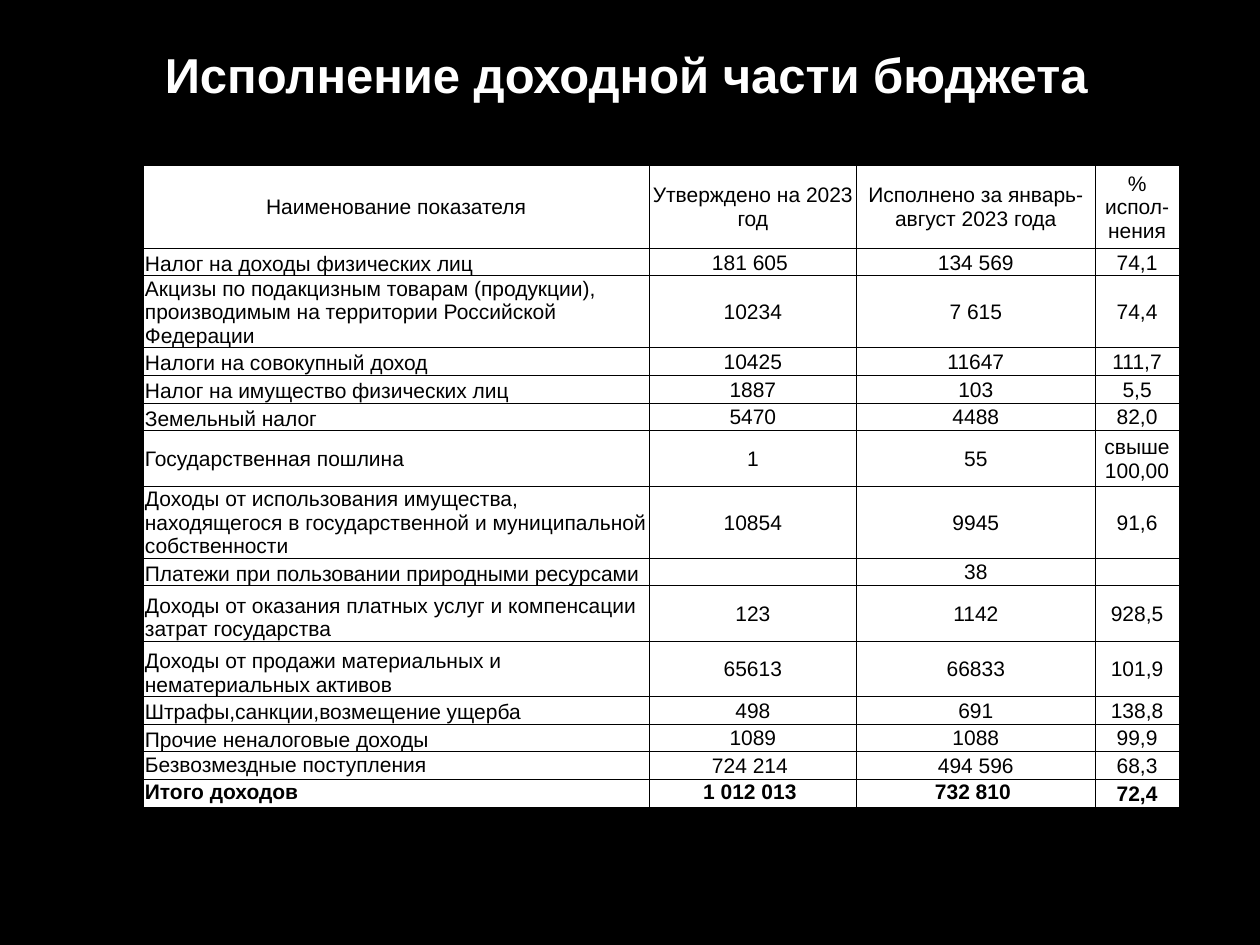
from lxml import etree
from pptx import Presentation
from pptx.dml.color import RGBColor
from pptx.enum.text import MSO_ANCHOR, PP_ALIGN
from pptx.oxml.ns import qn
from pptx.util import Inches, Pt

TOP, MIDDLE, BOTTOM = MSO_ANCHOR.TOP, MSO_ANCHOR.MIDDLE, MSO_ANCHOR.BOTTOM
LEFT, CENTER, JUSTIFY = PP_ALIGN.LEFT, PP_ALIGN.CENTER, PP_ALIGN.JUSTIFY

SLIDE_WIDTH, SLIDE_HEIGHT = 10, 7.5
TITLE_BOX = (0.47, 0.23, 9, 0.72)
TABLE_BOX = (1.14, 1.31, 8.22, 4.95)
COLUMN_WIDTHS = (4.01, 1.65, 1.89, 0.67)
LINE_HEIGHT = 0.22
BLACK, WHITE = "000000", "FFFFFF"
TITLE_FONT = {"name": "Arial", "size": Pt(28), "bold": True}
BODY_FONT = {"name": "Arial", "size": Pt(12), "bold": False}
TOTAL_FONT = {**BODY_FONT, "bold": True}
CELL_FORMAT = {
    "margin_left": Inches(0.01),
    "margin_right": Inches(0.01),
    "margin_top": Inches(0.01),
    "margin_bottom": 0,
}

HEADER = ("Наименование показателя", "Утверждено на 2023 год",
          "Исполнено за январь-август 2023 года", "% испол-нения")
INCOME = [
    (1, "Налог на доходы физических лиц", "181 605 ", "134 569", "74,1"),
    (2.25, "Акцизы по подакцизным товарам (продукции), производимым на территории "
     "Российской Федерации", "10234", "7 615", "74,4"),
    (1, "Налоги на совокупный доход", "10425", "11647", "111,7"),
    (1, "Налог на имущество физических лиц", "1887", "103", "5,5"),
    (1, "Земельный налог", "5470", "4488", "82,0"),
    (2, "Государственная пошлина", "1", "55", "свыше 100,00"),
    (2.25, "Доходы от использования имущества, находящегося в государственной "
     "и муниципальной собственности", "10854", "9945", "91,6"),
    (1, "Платежи при пользовании природными ресурсами", "", "38", ""),
    (2, "Доходы от оказания платных услуг и компенсации затрат государства",
     "123", "1142", "928,5"),
    (2, "Доходы от продажи материальных и нематериальных активов",
     "65613", "66833", "101,9"),
    (1, "Штрафы,санкции,возмещение ущерба", "498", "691", "138,8"),
    (1, "Прочие неналоговые доходы", "1089", "1088", "99,9"),
]
GRANTS = (1, "Безвозмездные поступления", "724 214 ", "494 596", "68,3")
TOTAL = (1, "Итого доходов", "1 012 013 ", "732 810 ", "72,4")
CENTERED_LABEL = "Государственная пошлина"


def color(value):
    return RGBColor.from_string(value)


def apply_format(target, values):
    for name, value in values.items():
        setattr(target, name, value)


def write_text(paragraph, text, font, font_color, alignment):
    paragraph.alignment = alignment
    if text:
        run = paragraph.add_run()
        run.text = text
        apply_format(run.font, font)
        run.font.color.rgb = color(font_color)
    else:
        end = etree.SubElement(paragraph._p, qn("a:endParaRPr"))
        end.set("sz", str(int(font["size"].pt * 100)))


def add_borders(cell):
    properties = cell._tc.get_or_add_tcPr()
    for side in ("L", "R", "T", "B"):
        line = etree.SubElement(properties, qn(f"a:ln{side}"), w=str(Pt(0.5)))
        fill = etree.SubElement(line, qn("a:solidFill"))
        etree.SubElement(fill, qn("a:srgbClr"), val=BLACK)


def fill_cell(cell, text, font, alignment, anchor):
    apply_format(cell, {**CELL_FORMAT, "vertical_anchor": anchor})
    add_borders(cell)
    cell.fill.solid()
    cell.fill.fore_color.rgb = color(WHITE)
    write_text(cell.text_frame.paragraphs[0], text, font, BLACK, alignment)


def fill_row(table, index, row, font, alignments, anchors):
    lines, *texts = row
    table.rows[index].height = Inches(lines * LINE_HEIGHT)
    for column, values in enumerate(zip(texts, alignments, anchors)):
        text, alignment, anchor = values
        fill_cell(table.cell(index, column), text, font, alignment, anchor)


def add_title(slide, box):
    title = slide.shapes.title
    title.left, title.top, title.width, title.height = map(Inches, box)
    frame = title.text_frame
    apply_format(frame, {"word_wrap": True, "vertical_anchor": MIDDLE})
    write_text(frame.paragraphs[0], "Исполнение доходной части бюджета",
               TITLE_FONT, WHITE, CENTER)


def add_budget_table(slide, box):
    row_count = len(INCOME) + 3
    table = slide.shapes.add_table(row_count, len(HEADER), *map(Inches, box)).table
    apply_format(table, {"first_row": False, "horz_banding": False})
    for column, width in zip(table.columns, COLUMN_WIDTHS):
        column.width = Inches(width)
    fill_row(table, 0, (3, *HEADER), BODY_FONT, [CENTER] * 4, [MIDDLE] * 4)
    for index, row in enumerate(INCOME, start=1):
        label_anchor = MIDDLE if row[1] == CENTERED_LABEL else BOTTOM
        fill_row(table, index, row, BODY_FONT, [LEFT] + [CENTER] * 3,
                 [label_anchor] + [MIDDLE] * 3)
    closing_alignments = [JUSTIFY] + [CENTER] * 3
    fill_row(table, row_count - 2, GRANTS, BODY_FONT, closing_alignments,
             [TOP] + [MIDDLE] * 3)
    fill_row(table, row_count - 1, TOTAL, TOTAL_FONT, closing_alignments,
             [TOP] * 3 + [MIDDLE])


def main():
    presentation = Presentation()
    presentation.slide_width = Inches(SLIDE_WIDTH)
    presentation.slide_height = Inches(SLIDE_HEIGHT)
    slide = presentation.slides.add_slide(presentation.slide_layouts[5])
    slide.background.fill.solid()
    slide.background.fill.fore_color.rgb = color(BLACK)
    add_title(slide, TITLE_BOX)
    add_budget_table(slide, TABLE_BOX)
    presentation.save("out.pptx")


if __name__ == "__main__":
    main()
